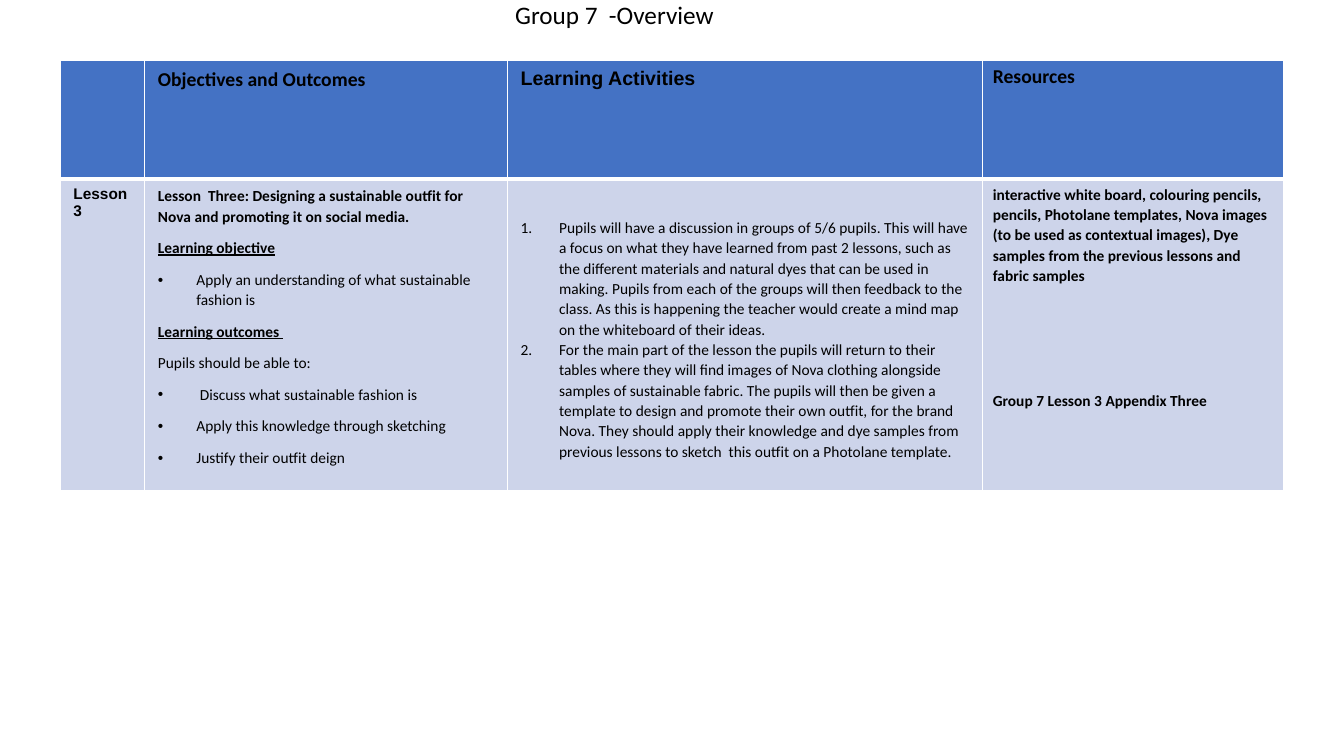
from lxml.etree import SubElement
from pptx import Presentation
from pptx.dml.color import RGBColor as Color
from pptx.enum.text import MSO_ANCHOR as Anchor, PP_ALIGN as Align
from pptx.oxml.ns import qn
from pptx.util import Cm, Pt

# Content: each cell is a list of (paragraph style, text)
TITLE = "Group 7  -Overview"
HEADINGS = [
    [],
    [("heading", "Objectives and Outcomes")],
    [("arial_heading", "Learning Activities")],
    [("plain_heading", "Resources")],
]
LESSON = [
    [("label", "Lesson 3")],
    [
        ("strong", "Lesson  Three: Designing a sustainable outfit for Nova and promoting it on social media."),
        ("subhead", "Learning objective"),
        ("bullet", "Apply an understanding of what sustainable fashion is"),
        ("subhead", "Learning outcomes "),
        ("body", "Pupils should be able to:"),
        ("bullet", " Discuss what sustainable fashion is"),
        ("bullet", "Apply this knowledge through sketching"),
        ("bullet", "Justify their outfit deign"),
    ],
    [
        ("number", "Pupils will have a discussion in groups of 5/6 pupils. This will have a focus on what "
                   "they have learned from past 2 lessons, such as the different materials and natural dyes "
                   "that can be used in making. Pupils from each of the groups will then feedback to the "
                   "class. As this is happening the teacher would create a mind map on the whiteboard of "
                   "their ideas."),
        ("number", "For the main part of the lesson the pupils will return to their tables where they will "
                   "find images of Nova clothing alongside samples of sustainable fabric. The pupils will "
                   "then be given a template to design and promote their own outfit, for the brand Nova. "
                   "They should apply their knowledge and dye samples from previous lessons to sketch  this "
                   "outfit on an Photolane template.".replace("an Photolane", "a Photolane")),
    ],
    [
        ("strong", "interactive white board, colouring pencils, pencils, Photolane templates, Nova images "
                   "(to be used as contextual images), Dye samples from the previous lessons and fabric samples"),
        ("appendix", "Group 7 Lesson 3 Appendix Three"),
    ],
]

# Theme
THEME = {
    "text": "000000", "header": "4472C4", "body": "CDD4EA", "rule": "FFFFFF",
    "font": "Calibri", "label_font": "Arial",
    "title": Pt(18), "heading": Pt(14), "small": Pt(11),
}
BASE = {"font": {"name": THEME["font"], "size": THEME["small"], "bold": False},
        "line": 1.07, "before": 8, "mark": None}


def style(line=1.07, before=8, mark=None, **font):
    return {"font": {**BASE["font"], **font}, "line": line, "before": before, "mark": mark}


STYLES = {
    "heading": style(size=THEME["heading"], bold=True),
    "arial_heading": style(size=THEME["heading"], bold=True, name=THEME["label_font"]),
    "plain_heading": style(line=1.0, size=THEME["heading"], bold=True),
    "label": style(line=1.0, bold=True, name=THEME["label_font"]),
    "strong": style(bold=True),
    "subhead": style(bold=True, underline=True),
    "body": style(),
    "bullet": style(mark=("a:buChar", {"char": "•"})),
    "number": style(before=0, mark=("a:buAutoNum", {"type": "arabicPeriod"})),
    "appendix": style(before=75, bold=True),
}

# Layout
COLUMNS = [Cm(2.13), Cm(9.14), Cm(11.99), Cm(7.59)]
ROWS = [Cm(3), Cm(7.85)]
WIDE, NARROW = (Cm(0.34), Cm(0.17)), (Cm(0.25), Cm(0.13))
ACTIVITIES_TOP = Cm(0.97)
HANG = Cm(0.97)


def set_values(target, values):
    for name, value in values.items():
        setattr(target, name, value)


def add_mark(para, mark):
    tag, values = mark
    props = para._p.get_or_add_pPr()
    props.set("marL", str(HANG))
    props.set("indent", str(-HANG))
    if tag == "a:buChar":
        SubElement(props, qn("a:buFont"), typeface=THEME["label_font"])
    SubElement(props, qn(tag), values)


def write(frame, paragraphs):
    for index, (name, text) in enumerate(paragraphs):
        look = STYLES[name]
        para = frame.paragraphs[0] if index == 0 else frame.add_paragraph()
        if look["mark"]:
            add_mark(para, look["mark"])
        set_values(para, {"line_spacing": look["line"],
                          "space_before": Pt(look["before"] if index else 0)})
        span = para.add_run()
        span.text = text
        set_values(span.font, look["font"])
        span.font.color.rgb = Color.from_string(THEME["text"])


def add_borders(cell, widths):
    props = cell._tc.get_or_add_tcPr()
    for side, width in widths.items():
        line = SubElement(props, qn(f"a:ln{side}"), w=str(Pt(width)))
        fill = SubElement(line, qn("a:solidFill"))
        SubElement(fill, qn("a:srgbClr"), val=THEME["rule"])


def add_title(page):
    box = page.shapes.title
    set_values(box, {"left": Cm(12.73), "top": Cm(-0.05), "width": Cm(6.2), "height": Cm(0.94)})
    frame = box.text_frame
    set_values(frame, {"word_wrap": True, "vertical_anchor": Anchor.MIDDLE})
    para = frame.paragraphs[0]
    set_values(para, {"alignment": Align.LEFT, "line_spacing": 0.9})
    span = para.add_run()
    span.text = TITLE
    set_values(span.font, {"name": THEME["font"], "size": THEME["title"]})
    span.font.color.rgb = Color.from_string(THEME["text"])


def add_plan(page):
    table = page.shapes.add_table(len(ROWS), len(COLUMNS), Cm(1.51), Cm(1.51),
                                  sum(COLUMNS), sum(ROWS)).table
    for column, width in zip(table.columns, COLUMNS):
        column.width = width
    for row, height in zip(table.rows, ROWS):
        row.height = height
    for r, contents in enumerate([HEADINGS, LESSON]):
        for c, paragraphs in enumerate(contents):
            cell = table.cell(r, c)
            side, edge = NARROW if c == len(COLUMNS) - 1 else WIDE
            top = ACTIVITIES_TOP if (r, c) == (1, 2) else edge
            set_values(cell, {"margin_left": side, "margin_right": side,
                              "margin_top": top, "margin_bottom": edge})
            add_borders(cell, {"L": 1, "R": 1, "T": 1 if r == 0 else 3, "B": 3 if r == 0 else 1})
            cell.fill.solid()
            cell.fill.fore_color.rgb = Color.from_string(THEME["body" if r else "header"])
            write(cell.text_frame, paragraphs)


def main():
    deck = Presentation()
    set_values(deck, {"slide_width": Cm(33.87), "slide_height": Cm(19.05)})
    page = deck.slides.add_slide(deck.slide_layouts[5])
    add_title(page)
    add_plan(page)
    deck.save("out.pptx")


if __name__ == "__main__":
    main()
